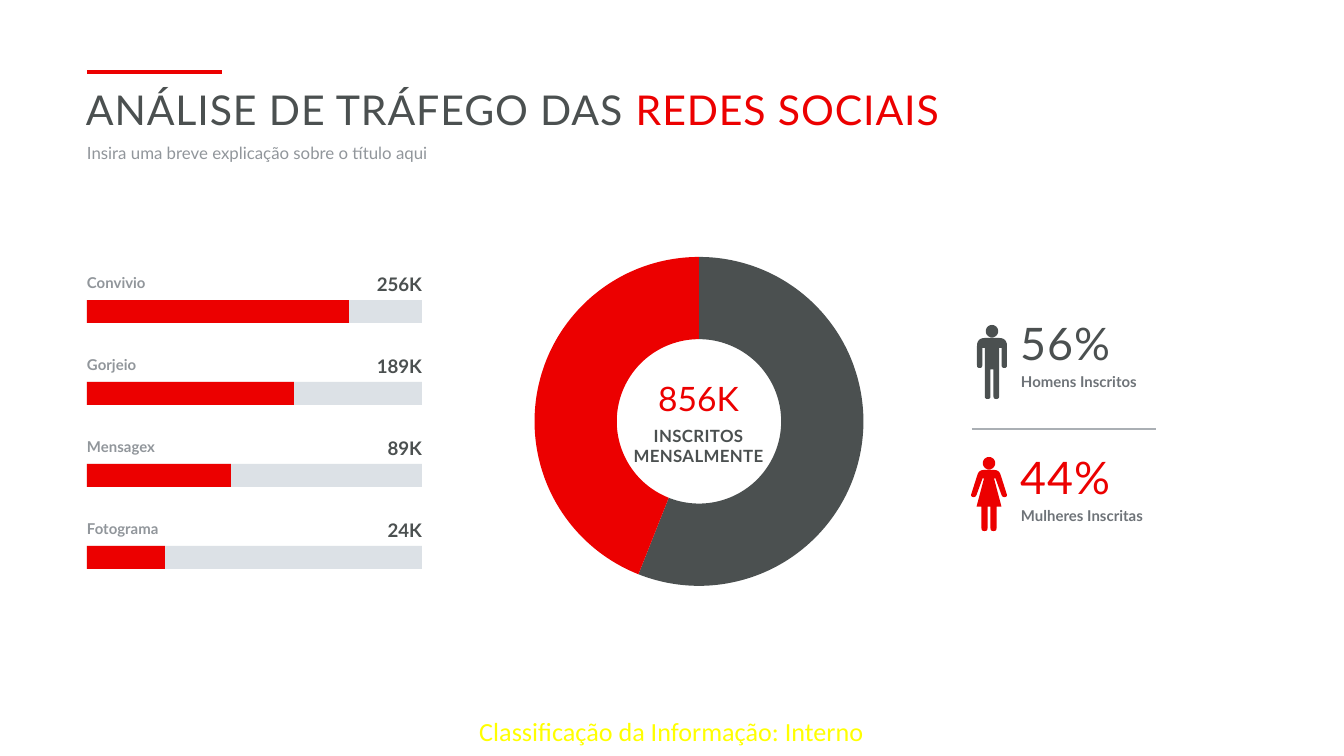
from lxml import etree
from pptx import Presentation
from pptx.chart.data import CategoryChartData
from pptx.dml.color import RGBColor
from pptx.enum.chart import XL_CHART_TYPE
from pptx.enum.shapes import MSO_CONNECTOR, MSO_SHAPE
from pptx.enum.text import MSO_ANCHOR, PP_ALIGN
from pptx.oxml.ns import qn
from pptx.util import Pt
from math import cos, dist, pi, sin

PX = 914400 / 134.4
LEFT, CENTER, RIGHT = PP_ALIGN.LEFT, PP_ALIGN.CENTER, PP_ALIGN.RIGHT
TOP, MIDDLE = MSO_ANCHOR.TOP, MSO_ANCHOR.MIDDLE
RECT, STRAIGHT = MSO_SHAPE.RECTANGLE, MSO_CONNECTOR.STRAIGHT
DOUGHNUT = XL_CHART_TYPE.DOUGHNUT

RED, DARK, GREY, MID = "EC0000", "4B5050", "91969B", "6E7378"
TRACK, RULE, YELLOW = "DCE1E6", "AAAFB4", "FFFF00"

# Right half of each figure: x from its axis, y from its top, corner radius,
# in tenths of a px
MAN = [(150, 130, 80), (150, 430, 27), (97, 430, 27), (97, 230, 0),
       (72, 230, 0), (72, 740, 28), (15, 740, 28), (15, 445, 0)]
WOMAN = [(101, 130, 50), (185, 395, 25), (135, 405, 25), (65, 215, 0),
         (50, 215, 0), (125, 497, 0), (75, 497, 0), (75, 740, 28),
         (15, 740, 28), (15, 497, 0)]


def px(n):
    return round(n * PX)


def rgb(value):
    return RGBColor.from_string(value)


def add_text(s, box, lines, size, color, bold=False, align=LEFT, spc=0,
             font="Lato", anchor=TOP, leading=None):
    """Each line is a list of (text, colour or None) runs, or a plain string."""
    tf = s.shapes.add_textbox(*map(px, box)).text_frame
    tf.margin_left = tf.margin_right = tf.margin_top = tf.margin_bottom = 0
    tf.word_wrap = True
    tf.vertical_anchor = anchor
    for i, line in enumerate(lines):
        p = tf.add_paragraph() if i else tf.paragraphs[0]
        p.alignment = align
        if leading:
            p.line_spacing = Pt(leading)
        p.font.name, p.font.size, p.font.bold = font, Pt(size), bold
        p.font.color.rgb = rgb(color)
        if spc:
            p._p.pPr.find(qn("a:defRPr")).set("spc", str(spc))
        for text, run_color in [(line, None)] if isinstance(line, str) else line:
            r = p.add_run()
            r.text = text
            if run_color:
                r.font.color.rgb = rgb(run_color)


def paint(sp, color):
    sp.shadow.inherit = False
    sp.fill.solid()
    sp.fill.fore_color.rgb = rgb(color)
    sp.line.fill.background()


def add_bar(s, x, y, w, h, color):
    paint(s.shapes.add_shape(RECT, px(x), px(y), px(w), px(h)), color)


def add_rule(s, x, y, w, color, weight):
    line = s.shapes.add_connector(STRAIGHT, px(x), px(y), px(x + w), px(y))
    line.line.color.rgb = rgb(color)
    line.line.width = Pt(weight)
    etree.SubElement(line._element.spPr, qn("a:effectLst"))


def rounded(vertices, steps=6):
    """Outline of a polygon whose corners are quadratic curves."""
    points = []
    for i, (x, y, radius) in enumerate(vertices):
        if not radius:
            points.append((x, y))
            continue
        ends = []
        for nx, ny, _ in (vertices[i - 1], vertices[(i + 1) % len(vertices)]):
            t = radius / dist((x, y), (nx, ny))
            ends.append((x + (nx - x) * t, y + (ny - y) * t))
        (ax, ay), (bx, by) = ends
        for k in range(steps + 1):
            t = k / steps
            a, c, b = (1 - t) ** 2, 2 * t * (1 - t), t * t
            points.append((a * ax + c * x + b * bx, a * ay + c * y + b * by))
    return points


def add_figure(s, axis, top, half, color):
    body = rounded(half + [(-x, y, r) for x, y, r in reversed(half)])
    head = [(62 * sin(pi * k / 16), 62 - 62 * cos(pi * k / 16))
            for k in range(32)]
    fb = s.shapes.build_freeform(*body[0], scale=PX / 10)
    fb.add_line_segments(body[1:])
    fb.move_to(*head[0])
    fb.add_line_segments(head[1:])
    paint(fb.convert_to_shape(px(axis), px(top)), color)


def add_header(s, x, y, w):
    add_rule(s, x, y, 135, RED, 2.25)
    add_text(s, (x - 1, y + 13, w, 56),
             [[("ANÁLISE DE TRÁFEGO DAS ", None), ("REDES SOCIAIS", RED)]],
             22, DARK, spc=50)
    add_text(s, (x, y + 69, w, 20),
             ["Insira uma breve explicação sobre o título aqui"],
             9, GREY, leading=12)


def add_networks(s, x, y, w):
    networks = [("Convivio", "256K", 262), ("Gorjeio", "189K", 207),
                ("Mensagex", "89K", 144), ("Fotograma", "24K", 78)]
    for i, (name, value, length) in enumerate(networks):
        top = y + 82 * i
        add_text(s, (x, top + 1, 179, 17), [name], 8, GREY, bold=True)
        add_text(s, (x + w - 87, top, 87, 23), [value], 10, DARK,
                 bold=True, align=RIGHT)
        add_bar(s, x, top + 27, w, 23, TRACK)
        add_bar(s, x, top + 27, length, 23, RED)


def add_subscribers(s, x, y, w, h):
    data = CategoryChartData()
    data.categories = ["1", "2"]
    data.add_series("Series 1", (56, 44))
    chart = s.shapes.add_chart(DOUGHNUT, px(x), px(y), px(w), px(h), data).chart
    chart.has_legend = chart.has_title = False
    chart.font.name, chart.font.size = "Calibri", Pt(10)
    chart.font.color.rgb = rgb("000000")
    plot = chart.plots[0]
    plot.vary_by_categories = False
    for i, color in enumerate((DARK, RED)):
        fmt = plot.series[0].points[i].format
        fmt.fill.solid()
        fmt.fill.fore_color.rgb = rgb(color)
        fmt.line.fill.background()
    # Total in the hole
    add_text(s, (x + 91, y + 144, 183, 40), ["856K"], 18, RED, align=CENTER)
    add_text(s, (x + 91, y + 192, 183, 40), ["INSCRITOS", "MENSALMENTE"],
             9, DARK, bold=True, align=CENTER, spc=20)


def add_genders(s, x, y):
    genders = [(20, 9, MAN, "56%", "Homens Inscritos", DARK),
               (17, 7, WOMAN, "44%", "Mulheres Inscritas", RED)]
    for i, (axis, drop, half, share, label, color) in enumerate(genders):
        top = y + 134 * i
        add_figure(s, x + axis, top + drop, half, color)
        add_text(s, (x + 49, top, 187, 54), [share], 24, color, spc=40)
        add_text(s, (x + 49, top + 57, 187, 17), [label], 8, MID, bold=True)
    add_rule(s, x, y + 113, 184, RULE, 0.75)


def main():
    prs = Presentation()
    prs.slide_width, prs.slide_height = px(1344), px(756)
    s = prs.slides.add_slide(prs.slide_layouts[6])
    add_header(s, 87, 72, 1169)
    add_networks(s, 87, 273, 335)
    add_subscribers(s, 516, 234, 366, 375)
    add_genders(s, 972, 316)
    # Footer classification
    add_text(s, (449, 707, 445, 48), ["Classificação da Informação: Interno"],
             14, YELLOW, align=CENTER, font="Calibri", anchor=MIDDLE)
    prs.save("out.pptx")


if __name__ == "__main__":
    main()
